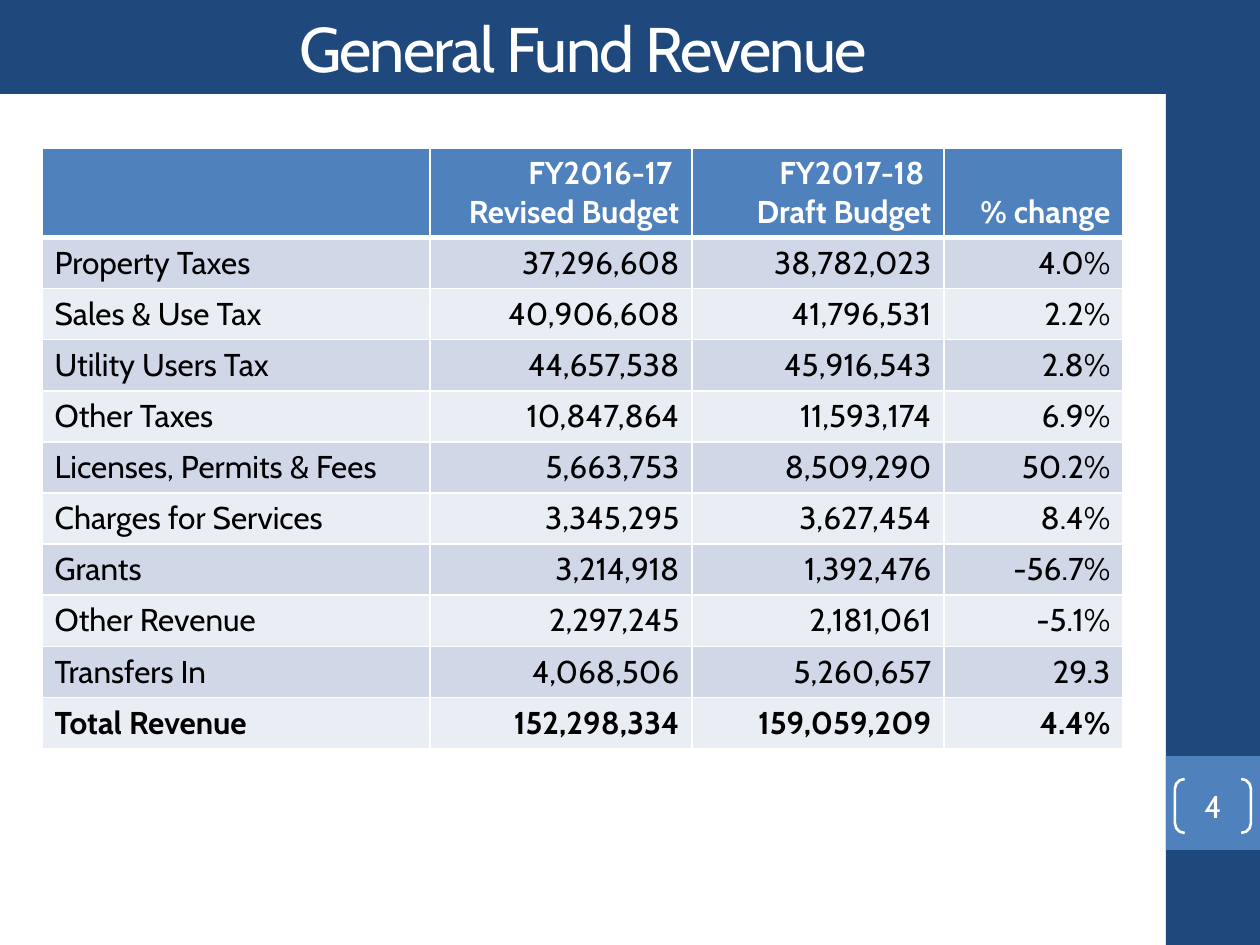
"""Build the General Fund Revenue slide with its budget table."""
import dataclasses

import lxml.etree
import pptx
import pptx.dml.color
import pptx.enum.shapes
import pptx.enum.text
import pptx.oxml.ns
import pptx.util

PIXEL = pptx.util.Inches(1) // 126
FONT = "Cabin"
WHITE = pptx.dml.color.RGBColor(0xFF, 0xFF, 0xFF)
BLACK = pptx.dml.color.RGBColor(0x00, 0x00, 0x00)
NAVY = pptx.dml.color.RGBColor(0x1F, 0x49, 0x7D)
BLUE = pptx.dml.color.RGBColor(0x4F, 0x81, 0xBD)
DARK_BAND = pptx.dml.color.RGBColor(0xD0, 0xD8, 0xE8)
LIGHT_BAND = pptx.dml.color.RGBColor(0xE9, 0xED, 0xF4)

ALIGN = pptx.enum.text.PP_ALIGN
ANCHOR = pptx.enum.text.MSO_ANCHOR
SHAPE = pptx.enum.shapes.MSO_SHAPE


@dataclasses.dataclass(frozen=True)
class Box:
    left: int
    top: int
    width: int
    height: int

    def emu(self) -> tuple[int, ...]:
        return tuple(value * PIXEL for value in dataclasses.astuple(self))


@dataclasses.dataclass(frozen=True)
class Revenue:
    source: str
    revised: str
    draft: str
    change: str


TITLE_BOX = Box(0, 0, 1166, 94)
SIDEBAR_BOX = Box(1166, 0, 94, 945)
NUMBER_PANEL_BOX = Box(1166, 756, 94, 94)
BRACKET_BOX = Box(1175, 779, 76, 54)
HEADER_HEIGHT = 88
ROW_HEIGHT = 51
COLUMN_WIDTHS = (388, 262, 252, 179)

HEADER = Revenue("", "FY2016-17 \nRevised Budget", "FY2017-18 \nDraft Budget", "% change")
REVENUES = (
    Revenue("Property Taxes", "37,296,608", "38,782,023", "4.0%"),
    Revenue("Sales & Use Tax", "40,906,608", "41,796,531", "2.2%"),
    Revenue("Utility Users Tax", "44,657,538", "45,916,543", "2.8%"),
    Revenue("Other Taxes", "10,847,864", "11,593,174", "6.9%"),
    Revenue("Licenses, Permits & Fees", "5,663,753", "8,509,290", "50.2%"),
    Revenue("Charges for Services", "3,345,295", "3,627,454", "8.4%"),
    Revenue("Grants", "3,214,918", "1,392,476", "-56.7%"),
    Revenue("Other Revenue", "2,297,245", "2,181,061", "-5.1%"),
    Revenue("Transfers In", "4,068,506", "5,260,657", "29.3"),
    Revenue("Total Revenue", "152,298,334", "159,059,209", "4.4%"),
)
TABLE_BOX = Box(42, 148, sum(COLUMN_WIDTHS), HEADER_HEIGHT + ROW_HEIGHT * len(REVENUES))


def write_text(frame, text: str, *, size: int = 18, color=WHITE, bold: bool = False,
               align=ALIGN.CENTER, spacing: int = 0) -> None:
    for index, line in enumerate(text.split("\n")):
        paragraph = frame.add_paragraph() if index else frame.paragraphs[0]
        paragraph.alignment = align
        run = paragraph.add_run()
        run.text = line
        run.font.name = FONT
        run.font.size = pptx.util.Pt(size)
        run.font.bold = bold
        run.font.color.rgb = color
        if spacing:
            run.font._element.set("spc", str(spacing * 100))


def fill_solid(target, color) -> None:
    target.fill.solid()
    target.fill.fore_color.rgb = color


def add_panel(slide, box: Box, color) -> None:
    panel = slide.shapes.add_shape(SHAPE.RECTANGLE, *box.emu())
    panel.shadow.inherit = False
    fill_solid(panel, color)
    panel.line.fill.background()


def add_title(slide, text: str) -> None:
    title = slide.shapes.title
    title.left, title.top, title.width, title.height = TITLE_BOX.emu()
    fill_solid(title, NAVY)
    frame = title.text_frame
    frame.auto_size = pptx.enum.text.MSO_AUTO_SIZE.NONE
    frame.vertical_anchor = ANCHOR.MIDDLE
    write_text(frame, text, size=36, spacing=-1)


def add_page_number(slide, number: str) -> None:
    bracket = slide.shapes.add_shape(SHAPE.DOUBLE_BRACKET, *BRACKET_BOX.emu())
    bracket.adjustments[0] = 0.18
    bracket.shadow.inherit = False
    bracket.fill.background()
    bracket.line.color.rgb = WHITE
    bracket.line.width = pptx.util.Pt(1.5)
    frame = bracket.text_frame
    frame.margin_left = frame.margin_right = frame.margin_top = frame.margin_bottom = 0
    frame.vertical_anchor = ANCHOR.MIDDLE
    write_text(frame, number)


def set_borders(cell, top: int, bottom: int) -> None:
    properties = cell._tc.get_or_add_tcPr()
    widths = {"lnL": 1, "lnR": 1, "lnT": top, "lnB": bottom}
    for index, (side, width) in enumerate(widths.items()):
        line = lxml.etree.Element(pptx.oxml.ns.qn(f"a:{side}"), w=str(pptx.util.Pt(width)))
        fill = lxml.etree.SubElement(line, pptx.oxml.ns.qn("a:solidFill"))
        lxml.etree.SubElement(fill, pptx.oxml.ns.qn("a:srgbClr"), val=str(WHITE))
        properties.insert(index, line)


def fill_row(table, index: int, revenue: Revenue) -> None:
    is_header = index == 0
    is_total = index == len(REVENUES)
    band = BLUE if is_header else DARK_BAND if index % 2 else LIGHT_BAND
    table.rows[index].height = (HEADER_HEIGHT if is_header else ROW_HEIGHT) * PIXEL
    for column, text in enumerate(dataclasses.astuple(revenue)):
        cell = table.cell(index, column)
        cell.vertical_anchor = ANCHOR.BOTTOM
        fill_solid(cell, band)
        set_borders(cell, top=3 if index == 1 else 1, bottom=3 if is_header else 1)
        if text:
            write_text(cell.text_frame, text, color=WHITE if is_header else BLACK,
                       bold=is_header or is_total,
                       align=ALIGN.RIGHT if column else ALIGN.LEFT)


def add_revenue_table(slide) -> None:
    rows = (HEADER, *REVENUES)
    table = slide.shapes.add_table(len(rows), len(COLUMN_WIDTHS), *TABLE_BOX.emu()).table
    for column, width in zip(table.columns, COLUMN_WIDTHS):
        column.width = width * PIXEL
    for index, revenue in enumerate(rows):
        fill_row(table, index, revenue)


def main() -> None:
    presentation = pptx.Presentation()
    presentation.slide_width = 1260 * PIXEL
    presentation.slide_height = 945 * PIXEL
    slide = presentation.slides.add_slide(presentation.slide_layouts.get_by_name("Title Only"))
    add_panel(slide, SIDEBAR_BOX, NAVY)
    add_panel(slide, NUMBER_PANEL_BOX, BLUE)
    add_title(slide, "General Fund Revenue")
    add_page_number(slide, "4")
    add_revenue_table(slide)
    presentation.save("out.pptx")


if __name__ == "__main__":
    main()
